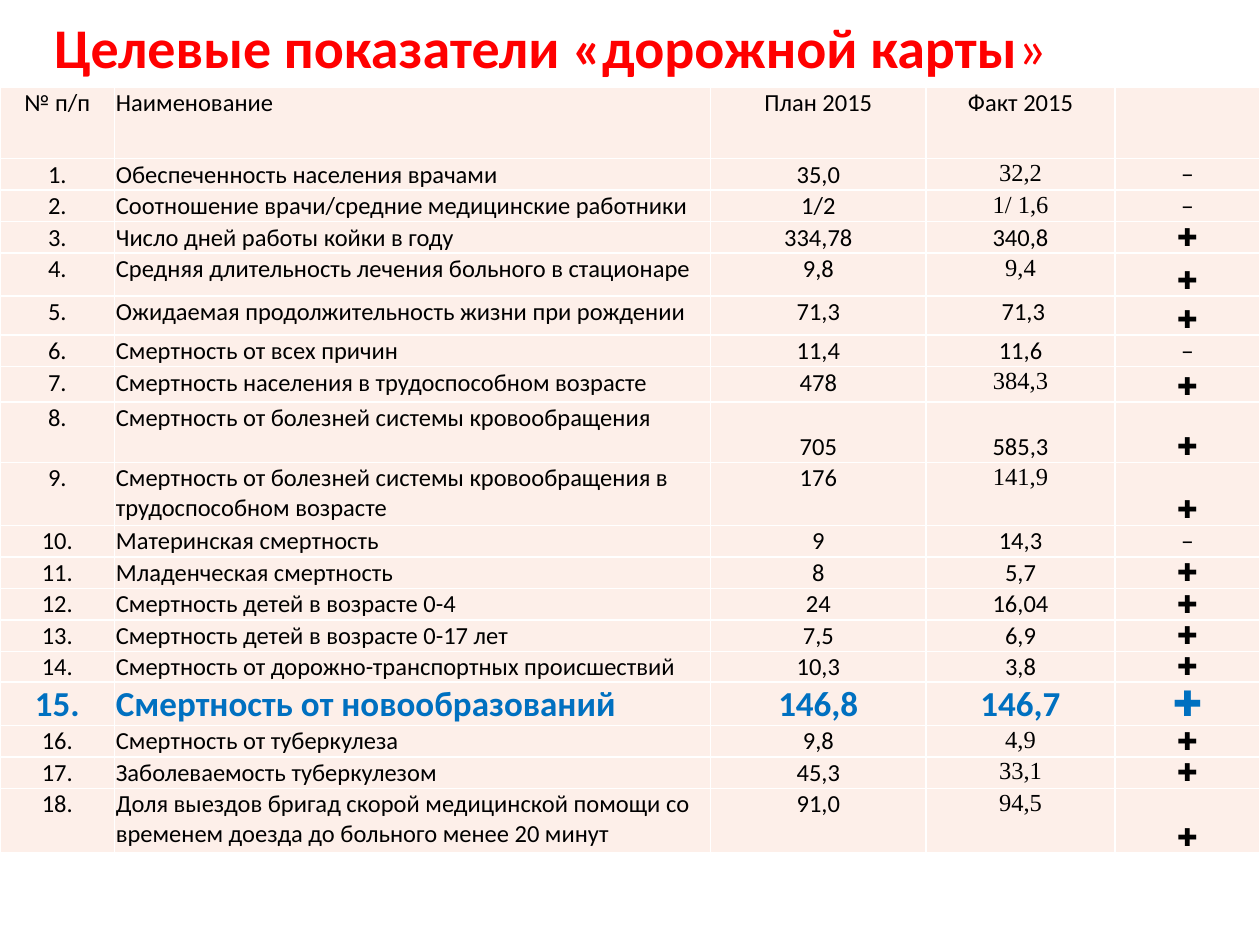
from lxml import etree
from pptx import Presentation
from pptx.dml.color import RGBColor
from pptx.enum.text import MSO_ANCHOR, MSO_AUTO_SIZE, PP_ALIGN
from pptx.oxml.ns import qn
from pptx.util import Inches, Pt

LEFT, CENTER = PP_ALIGN.LEFT, PP_ALIGN.CENTER
TOP, BOTTOM = MSO_ANCHOR.TOP, MSO_ANCHOR.BOTTOM
GROW = MSO_AUTO_SIZE.SHAPE_TO_FIT_TEXT
TITLE_ONLY = 5

SANS, SERIF = "Calibri", "Times New Roman"
BLACK, WHITE, RED, BLUE, BLUSH = "000000", "FFFFFF", "FF0000", "0070C0", "FDEFE9"

COLUMN_WIDTHS = [0.91, 4.73, 1.71, 1.5, 1.15]
LINE_HEIGHT = 0.25
ROW_HEIGHTS = {0: 0.57, 4: 0.34, 5: 0.31, 7: 0.28, 8: 0.48, 9: 0.5, 14: 0.24, 15: 0.34, 18: 0.51}
SERIF_FACT_ROWS = {1, 2, 4, 7, 9, 16, 17, 18}
LOW_VALUE_ROW, HIGHLIGHT_ROW = 8, 15
NAME, FACT, MARK = 1, 3, 4

HEADER = ("№ п/п", "Наименование", "План 2015", "Факт 2015", "")
INDICATORS = [
    ("Обеспеченность населения врачами", "35,0", "32,2", "−"),
    ("Соотношение врачи/средние медицинские работники", "1/2", "1/ 1,6", "−"),
    ("Число дней работы койки в году", "334,78", "340,8", "✚"),
    ("Средняя длительность лечения больного в стационаре", "9,8", "9,4", "✚"),
    ("Ожидаемая продолжительность жизни при рождении", "71,3", " 71,3", "✚"),
    ("Смертность от всех причин", "11,4", "11,6", "−"),
    ("Смертность населения в трудоспособном возрасте", "478", "384,3", "✚"),
    ("Смертность от болезней системы кровообращения", "705", "585,3", "✚"),
    ("Смертность от болезней системы кровообращения в трудоспособном возрасте", "176", "141,9", "✚"),
    ("Материнская смертность", "9", "14,3", "−"),
    ("Младенческая смертность", "8", "5,7", "✚"),
    ("Смертность детей в возрасте 0-4", "24", "16,04", "✚"),
    ("Смертность детей в возрасте 0-17 лет", "7,5", "6,9", "✚"),
    ("Смертность от дорожно-транспортных происшествий", "10,3", "3,8", "✚"),
    ("Смертность от новообразований", "146,8", "146,7", "✚"),
    ("Смертность от туберкулеза", "9,8", "4,9", "✚"),
    ("Заболеваемость туберкулезом", "45,3", "33,1", "✚"),
    ("Доля выездов бригад скорой медицинской помощи со временем доезда до больного менее 20 минут",
     "91,0", "94,5", "✚"),
]


def color(value):
    """Turn a hex string into a colour."""
    return RGBColor.from_string(value)


def add_span(para, text, size=14, font=SANS, fill=BLACK, bold=False):
    """Add one formatted run to a paragraph."""
    span = para.add_run()
    span.text = text
    span.font.size = Pt(size)
    span.font.name = font
    span.font.bold = bold
    span.font.color.rgb = color(fill)


def add_title(page):
    """Place the heading in the title placeholder."""
    box = page.shapes.title
    box.left, box.top = Inches(0.33), Inches(0.05)
    box.width, box.height = Inches(8.57), Inches(0.64)
    frame = box.text_frame
    frame.word_wrap = True
    frame.auto_size = GROW
    frame.vertical_anchor = TOP
    para = frame.paragraphs[0]
    para.alignment = LEFT
    add_span(para, "Целевые показатели «дорожной карты", size=32, fill=RED, bold=True)
    add_span(para, "»", size=32, fill=RED)


def add_borders(cell, fill=WHITE, width=1):
    """Draw a line on all four sides of a cell."""
    properties = cell._tc.get_or_add_tcPr()
    for side in ("lnL", "lnR", "lnT", "lnB"):
        line = etree.SubElement(properties, qn(f"a:{side}"), w=str(Pt(width)))
        solid = etree.SubElement(line, qn("a:solidFill"))
        etree.SubElement(solid, qn("a:srgbClr"), val=fill)


def fill_cell(cell, text, align=CENTER, anchor=TOP, **text_format):
    """Set a cell's margins, borders, fill and text."""
    cell.margin_left = cell.margin_right = cell.margin_top = Inches(0.01)
    cell.margin_bottom = 0
    cell.vertical_anchor = anchor
    add_borders(cell)
    cell.fill.solid()
    cell.fill.fore_color.rgb = color(BLUSH)
    para = cell.text_frame.paragraphs[0]
    para.alignment = align
    if text:
        add_span(para, text, **text_format)


def cell_format(row, column):
    """Choose the format of a cell from its place in the table."""
    chosen = {"align": LEFT if column == NAME else CENTER}
    if row and (column == MARK or (row == LOW_VALUE_ROW and column > NAME)):
        chosen["anchor"] = BOTTOM
    if column == FACT and row in SERIF_FACT_ROWS:
        chosen["font"] = SERIF
    if row == HIGHLIGHT_ROW:
        chosen.update(size=20, fill=BLUE, bold=True)
    return chosen


def add_indicator_table(page):
    """Build the table of planned and actual indicators."""
    rows = [HEADER] + [(f"{number}.", *values) for number, values in enumerate(INDICATORS, 1)]
    heights = [ROW_HEIGHTS.get(row, LINE_HEIGHT) for row in range(len(rows))]
    frame = page.shapes.add_table(len(rows), len(HEADER), 0, Inches(0.69),
                                  Inches(sum(COLUMN_WIDTHS)), Inches(sum(heights)))
    table = frame.table
    table.first_row = table.horz_banding = False
    for column, width in zip(table.columns, COLUMN_WIDTHS):
        column.width = Inches(width)
    for row, (values, height) in enumerate(zip(rows, heights)):
        table.rows[row].height = Inches(height)
        for column, text in enumerate(values):
            fill_cell(table.cell(row, column), text, **cell_format(row, column))


def main():
    """Create the slide and save the deck."""
    deck = Presentation()
    deck.slide_width, deck.slide_height = Inches(10), Inches(7.5)
    page = deck.slides.add_slide(deck.slide_layouts[TITLE_ONLY])
    add_title(page)
    add_indicator_table(page)
    deck.save("out.pptx")


if __name__ == "__main__":
    main()
